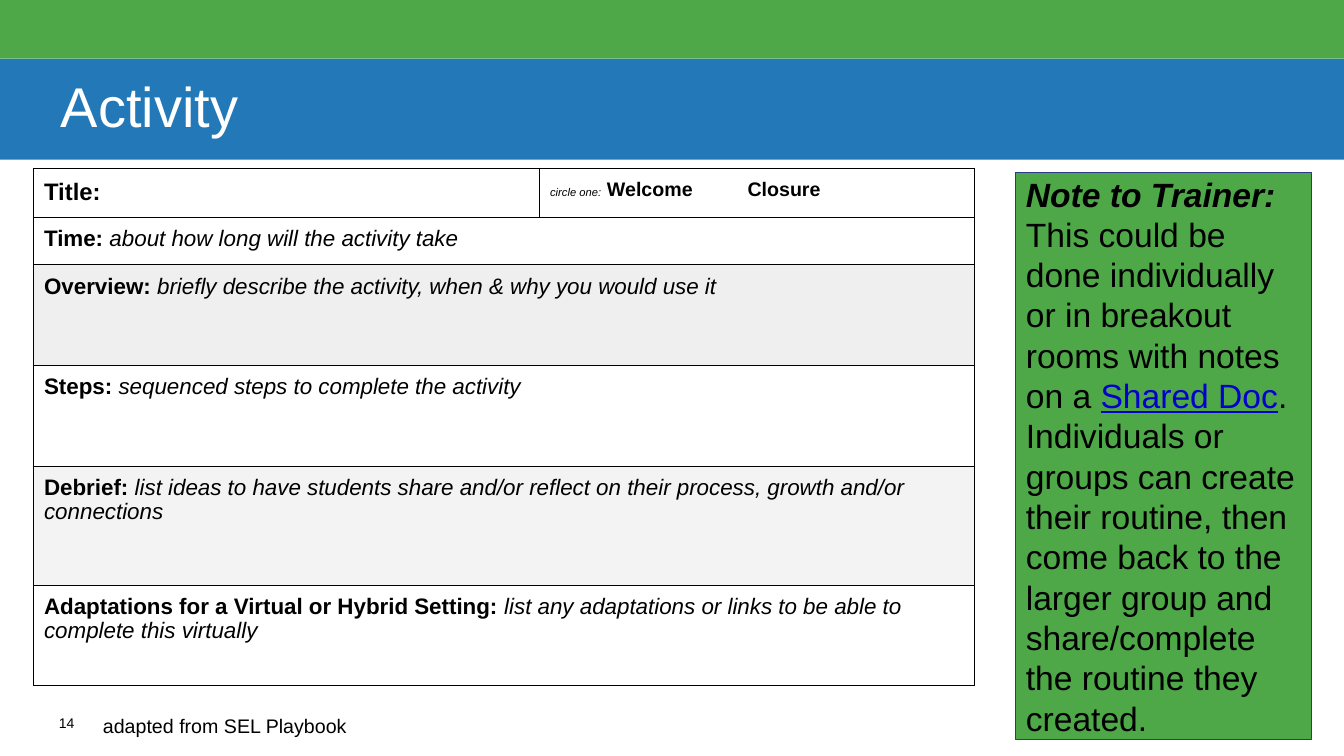
"""Builds the activity planning slide with its form table and trainer note."""
from dataclasses import dataclass

from lxml import etree
from pptx import Presentation
from pptx import util as u
from pptx.dml.color import RGBColor
from pptx.enum import shapes, text
from pptx.oxml.ns import qn

PX = 9525
COLUMNS = [143, 339, 414]
ROWS = [
    ("Time: ", "about how long will the activity take", 45, None),
    ("Overview: ", "briefly describe the activity, when & why you would use it", 96, "EFEFEF"),
    ("Steps: ", "sequenced steps to complete the activity", 96, None),
    ("Debrief: ", "list ideas to have students share and/or reflect on their process, "
     "growth and/or connections", 113, "F3F3F3"),
    ("Adaptations for a Virtual or Hybrid Setting: ",
     "list any adaptations or links to be able to complete this virtually", 96, None),
]
NOTE_START = "This could be done individually or in breakout rooms with notes on a "
NOTE_END = (". Individuals or groups can create their routine, then come back to the "
            "larger group and share/complete the routine they created.")


@dataclass(frozen=True)
class Theme:
    """Holds the colours and type sizes of the slide."""
    font: str = "Arial"
    green: str = "4EA848"
    blue: str = "2379B8"
    navy: str = "2B3890"
    link: str = "0000CC"
    ink: str = "000000"
    white: str = "FFFFFF"
    title: int = 40
    note: int = 24
    heading: int = 17
    body: int = 16
    small: int = 14
    number: int = 10
    tiny: int = 8


T = Theme()


def px(n):
    """Turn pixels into EMU."""
    return u.Emu(n * PX)


def rgb(value):
    """Turn a hex string into a colour."""
    return RGBColor.from_string(value)


def style(p, size, color=T.ink, spacing=None):
    """Set the font and line spacing of a paragraph."""
    p.font.name, p.font.size = T.font, u.Pt(size)
    p.font.color.rgb = rgb(color)
    p.alignment = text.PP_ALIGN.LEFT
    if spacing:
        p.line_spacing = spacing


def add_run(p, words, bold=None, italic=None):
    """Add a run to a paragraph and return it."""
    r = p.add_run()
    r.text = words
    r.font.bold, r.font.italic = bold, italic
    return r


def set_frame(tf, inset_x, inset_y, anchor):
    """Set the wrapping, insets and anchor of a text frame."""
    tf.word_wrap = True
    tf.margin_left = tf.margin_right = px(inset_x)
    tf.margin_top = tf.margin_bottom = px(inset_y)
    tf.vertical_anchor = anchor


def add_box(s, box, fill, line=None, inset_x=10, inset_y=10):
    """Add a flat rectangle and return its text frame."""
    sp = s.shapes.add_shape(shapes.MSO_SHAPE.RECTANGLE, *map(px, box))
    sp.shadow.inherit = False
    sp.fill.solid()
    sp.fill.fore_color.rgb = rgb(fill)
    if line:
        sp.line.color.rgb = rgb(line)
        sp.line.width = u.Pt(0.75)
    else:
        sp.line.fill.background()
    set_frame(sp.text_frame, inset_x, inset_y, text.MSO_ANCHOR.MIDDLE)
    return sp.text_frame


def add_label(s, box, words, size, inset):
    """Add a plain line of text."""
    tf = s.shapes.add_textbox(*map(px, box)).text_frame
    set_frame(tf, inset, inset, text.MSO_ANCHOR.TOP)
    p = tf.paragraphs[0]
    p.text = words
    style(p, size)


def format_cell(cell, fill):
    """Give a cell its fill, insets and thin borders."""
    if fill:
        cell.fill.solid()
        cell.fill.fore_color.rgb = rgb(fill)
    else:
        cell.fill.background()
    cell.margin_left = cell.margin_right = px(10)
    cell.margin_top = cell.margin_bottom = px(10)
    tcPr = cell._tc.get_or_add_tcPr()
    for i, side in enumerate(("a:lnL", "a:lnR", "a:lnT", "a:lnB")):
        ln = etree.Element(qn(side), w=str(u.Pt(0.75)))
        solid = etree.SubElement(ln, qn("a:solidFill"))
        etree.SubElement(solid, qn("a:srgbClr"), val=T.ink)
        tcPr.insert(i, ln)


def add_tab(p, position):
    """Add a left tab stop to a paragraph."""
    tabs = etree.SubElement(p._p.get_or_add_pPr(), qn("a:tabLst"))
    etree.SubElement(tabs, qn("a:tab"), pos=str(px(position)), algn="l")


def add_form(s):
    """Add the activity form table."""
    heights = [46] + [row[2] for row in ROWS]
    frame = s.shapes.add_table(len(heights), len(COLUMNS), px(32), px(160),
                               px(sum(COLUMNS)), px(sum(heights)))
    table = frame.table
    table.first_row = table.horz_banding = False
    for col, width in zip(table.columns, COLUMNS):
        col.width = px(width)
    fills = [None] + [row[3] for row in ROWS]
    for row, height, fill in zip(table.rows, heights, fills):
        row.height = px(height)
        for cell in row.cells:
            format_cell(cell, fill)

    table.cell(0, 0).merge(table.cell(0, 1))
    p = table.cell(0, 0).text_frame.paragraphs[0]
    add_run(p, "Title:", bold=True)
    style(p, T.heading)
    p = table.cell(0, 2).text_frame.paragraphs[0]
    add_tab(p, 188)
    add_run(p, "circle one:", italic=True).font.size = u.Pt(T.tiny)
    add_run(p, " ")
    add_run(p, "Welcome\tClosure", bold=True)
    style(p, T.small)

    for i, (label, hint, _, _) in enumerate(ROWS, 1):
        table.cell(i, 0).merge(table.cell(i, 2))
        p = table.cell(i, 0).text_frame.paragraphs[0]
        add_run(p, label, bold=True)
        add_run(p, hint, italic=True)
        style(p, T.body, spacing=0.95)


def add_note(s):
    """Add the note to the trainer."""
    tf = add_box(s, (967, 164, 282, 540), T.green, T.navy)
    p = tf.paragraphs[0]
    add_run(p, "Note to Trainer:", bold=True, italic=True)
    p = tf.add_paragraph()
    add_run(p, NOTE_START)
    r = add_run(p, "Shared Doc")
    r.font.underline = True
    r.font.color.rgb = rgb(T.link)
    add_run(p, NOTE_END)
    for p in tf.paragraphs:
        style(p, T.note, spacing=u.Pt(28.8))


def main():
    """Build and save the slide."""
    prs = Presentation()
    prs.slide_width, prs.slide_height = px(1280), px(720)
    s = prs.slides.add_slide(prs.slide_layouts[6])
    add_box(s, (0, 0, 1280, 56), T.green)
    p = add_box(s, (0, 56, 1280, 96), T.blue, inset_x=58, inset_y=0).paragraphs[0]
    p.text = "Activity"
    style(p, T.title, T.white, 0.9)
    add_label(s, (56, 680, 40, 24), "14", T.number, 0)
    add_form(s)
    add_label(s, (88, 670, 758, 42), "adapted from SEL Playbook", T.small, 10)
    add_note(s)
    prs.save("out.pptx")


if __name__ == "__main__":
    main()
